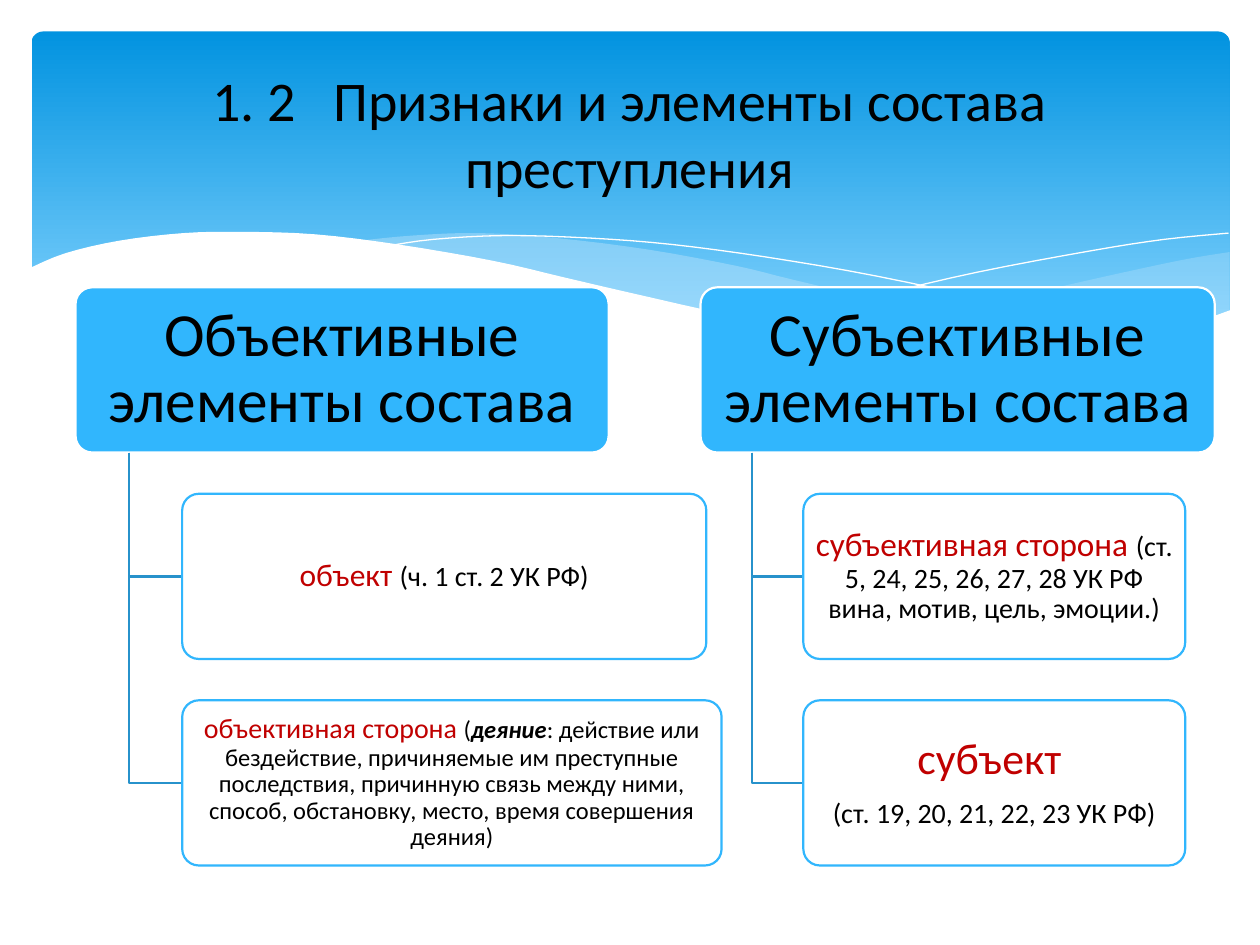
import pptx
import pptx.dml.color
import pptx.enum.shapes
import pptx.enum.text
import pptx.util
from lxml import etree

Pt = pptx.util.Pt
RGBColor = pptx.dml.color.RGBColor

BLACK = RGBColor(0x00, 0x00, 0x00)
WHITE = RGBColor(0xFF, 0xFF, 0xFF)
RED = RGBColor(0xC0, 0x00, 0x00)
SKY = RGBColor(0x31, 0xB6, 0xFD)
BRANCH_BLUE = RGBColor(0x27, 0x92, 0xCB)
BANNER_TOP = RGBColor(0x02, 0x93, 0xE0)
BANNER_BOTTOM = RGBColor(0x83, 0xD3, 0xFE)
WAVE_BLUE = RGBColor(0xC6, 0xE7, 0xFC)

# Banner curves as knots in points
RIGHT_WAVE = [
    [(702.7, 144), (673.2, 149), (619.9, 160.6), (560.9, 174.2), (508.3, 185), (475.9, 190.8)],
    [(475.9, 190.8), (507.6, 195.1), (545, 198.7), (578.2, 200.2), (614.9, 198.7),
     (645.8, 194.4), (673.2, 188.6), (702.7, 177.8)],
]
LEFT_WAVE = [
    [(206, 137.5), (236.2, 134.6), (273.6, 133.2), (318.2, 136.1), (370.1, 142.6),
     (420.5, 151.9), (452.9, 159.8), (508.3, 172.8), (558, 182.9), (602.6, 190.8), (643, 196.6)],
    [(643, 196.6), (610.6, 199.4), (581, 200.2), (538.6, 198.7), (489.6, 193), (432.7, 183.6),
     (381.6, 172.8), (323.3, 159.8), (275.8, 149), (232.6, 141.1), (206, 137.5)],
]
LEFT_LINE = [(222.5, 140.4), (247.7, 136.8), (288.7, 134.6), (337.7, 136.1), (383.8, 139.7),
             (437.8, 146.9), (500.4, 157.7), (572.4, 173.5), (653, 195.8)]
RIGHT_LINE = [(441.4, 185), (500.4, 169.2), (558.7, 155.5), (623.5, 143.3),
              (665.3, 136.8), (702, 133.2)]
WHITE_EDGE = [(16.6, 153.4), (37.4, 144.7), (68.4, 137.5), (105, 133.2), (139, 132.5),
              (180, 133.9), (227.5, 139.7), (281.5, 149), (321.8, 158.4), (362.2, 167.8),
              (416.9, 180), (466.6, 188.6), (522.7, 195.8), (582.5, 199.4), (630, 196.6),
              (669.6, 188.6), (703.4, 177.1)]


def smooth(knots, steps=4):
    """Return points of a Catmull-Rom curve through the knots."""
    padded = [knots[0], *knots, knots[-1]]
    points = [knots[0]]
    for a, b, c, d in zip(padded, padded[1:], padded[2:], padded[3:]):
        for t in (step / steps for step in range(1, steps + 1)):
            points.append(tuple(
                (2 * q + (r - p) * t + (2 * p - 5 * q + 4 * r - s) * t ** 2
                 + (3 * q - p - 3 * r + s) * t ** 3) / 2
                for p, q, r, s in zip(a, b, c, d)))
    return points


def add_span(para, text, size=16, color=BLACK, font="Calibri", bold=False, italic=False):
    span = para.add_run()
    span.text = text
    span.font.name = font
    span.font.size = Pt(size)
    span.font.color.rgb = color
    span.font.bold = bold
    span.font.italic = italic


class SlideBuilder:
    line_width = 1.25
    line_spacing = 0.9

    def __init__(self, page):
        self.page = page

    def paint(self, shape, fill=None, line=None, width=line_width, opacity=100):
        shape.shadow.inherit = False
        if fill is None:
            shape.fill.background()
        else:
            shape.fill.solid()
            shape.fill.fore_color.rgb = fill
        if line is None:
            shape.line.fill.background()
        else:
            shape.line.color.rgb = line
            shape.line.width = Pt(width)
        if opacity < 100:
            color = shape.element.spPr.find(".//" + pptx.oxml.ns.qn("a:srgbClr"))
            etree.SubElement(color, pptx.oxml.ns.qn("a:alpha"), val=str(opacity * 1000))

    def rounded(self, left, top, width, height, radius):
        box = self.page.shapes.add_shape(
            pptx.enum.shapes.MSO_SHAPE.ROUNDED_RECTANGLE,
            Pt(left), Pt(top), Pt(width), Pt(height))
        box.adjustments[0] = radius
        return box

    def banner(self):
        box = self.rounded(18, 18, 684.7, 194.4, 0.034)
        self.paint(box)
        box.fill.gradient()
        box.fill.gradient_angle = 270
        stops = zip(box.fill.gradient_stops, (0, 0.9), (BANNER_TOP, BANNER_BOTTOM))
        for stop, position, color in stops:
            stop.position = position
            stop.color.rgb = color

    def outline(self, points, closed=False, **style):
        corners = [(Pt(x), Pt(y)) for x, y in points]
        builder = self.page.shapes.build_freeform(*corners[0], scale=1.0)
        builder.add_line_segments(corners[1:], close=closed)
        self.paint(builder.convert_to_shape(), **style)

    def card(self, left, top, width, height, paragraphs, inset, **style):
        box = self.rounded(left, top, width, height, 0.1)
        self.paint(box, **style)
        frame = box.text_frame
        frame.word_wrap = True
        frame.vertical_anchor = pptx.enum.text.MSO_ANCHOR.MIDDLE
        frame.margin_left = frame.margin_right = Pt(inset)
        frame.margin_top = frame.margin_bottom = Pt(inset * 0.7)
        for index, spans in enumerate(paragraphs):
            para = frame.add_paragraph() if index else frame.paragraphs[0]
            para.alignment = pptx.enum.text.PP_ALIGN.CENTER
            para.line_spacing = self.line_spacing
            para.space_after = Pt(9 if index < len(paragraphs) - 1 else 0)
            for text, options in spans:
                add_span(para, text, **options)

    def branch(self, left, width, heading, children, top=164.2, height=94.4, step=118):
        """Draw a heading card with child cards hung from a trunk line."""
        trunk, child_left = left + width * 0.1, left + width * 0.2
        self.card(left, top, width, height, [[(heading, {"size": 35})]], 5,
                  fill=SKY, line=WHITE)
        for row, (child_width, inset, paragraphs) in enumerate(children, start=1):
            child_top = top + row * step
            middle = child_top + height / 2
            self.outline([(trunk, top + height), (trunk, middle), (child_left, middle)],
                         line=BRANCH_BLUE)
            self.card(child_left, child_top, child_width, height, paragraphs, inset,
                      fill=WHITE, line=SKY, opacity=90)

    def title(self, text):
        box = self.page.shapes.title
        box.left, box.top, box.width, box.height = Pt(36), Pt(26.6), Pt(648), Pt(98.6)
        frame = box.text_frame
        frame.word_wrap = True
        frame.auto_size = pptx.enum.text.MSO_AUTO_SIZE.NONE
        frame.vertical_anchor = pptx.enum.text.MSO_ANCHOR.MIDDLE
        frame.paragraphs[0].alignment = pptx.enum.text.PP_ALIGN.CENTER
        add_span(frame.paragraphs[0], text, size=32)
        # Bring the title in front of the banner
        box.element.getparent().append(box.element)


def main():
    deck = pptx.Presentation()
    deck.slide_width, deck.slide_height = Pt(720), Pt(540)
    builder = SlideBuilder(deck.slides.add_slide(deck.slide_layouts[5]))

    # Banner with waves
    builder.banner()
    for wave, opacity in ((RIGHT_WAVE, 29), (LEFT_WAVE, 40)):
        edges = [point for edge in wave for point in smooth(edge)]
        builder.outline(edges, closed=True, fill=WAVE_BLUE, opacity=opacity)
    for curve in (LEFT_LINE, RIGHT_LINE):
        builder.outline(smooth(curve), line=WHITE, width=0)
    builder.outline(smooth(WHITE_EDGE) + [(703.4, 236.9), (16.6, 236.9)],
                    closed=True, fill=WHITE)

    # Objective elements
    small = {"size": 14}
    builder.branch(43.2, 304.6, "Объективные элементы состава", [
        (299.5, 3, [[("объект ", {"size": 18, "color": RED}), ("(ч. 1 ст. 2 УК РФ)", {})]]),
        (308.2, 2, [[
            ("объективная сторона ", {"color": RED}),
            ("(", small),
            ("деяние", {"size": 14, "bold": True, "italic": True}),
            (": действие или бездействие, причиняемые им преступные последствия, "
             "причинную связь между ними, способ, обстановку, место, время "
             "совершения деяния)", small)]]),
    ])

    # Subjective elements
    builder.branch(400.3, 293.8, "Субъективные элементы состава", [
        (218.2, 3, [[
            ("субъективная сторона ", {"size": 19, "color": RED}),
            ("(ст. 5, 24, 25, 26, 27, 28 УК РФ вина, мотив, цель, эмоции.)", {})]]),
        (218.2, 3.5, [[("субъект ", {"size": 25, "color": RED})],
                      [("(ст. 19, 20, 21, 22, 23 УК РФ)", {})]]),
    ])

    builder.title("1. 2   Признаки и элементы состава преступления")
    deck.save("out.pptx")


if __name__ == "__main__":
    main()
